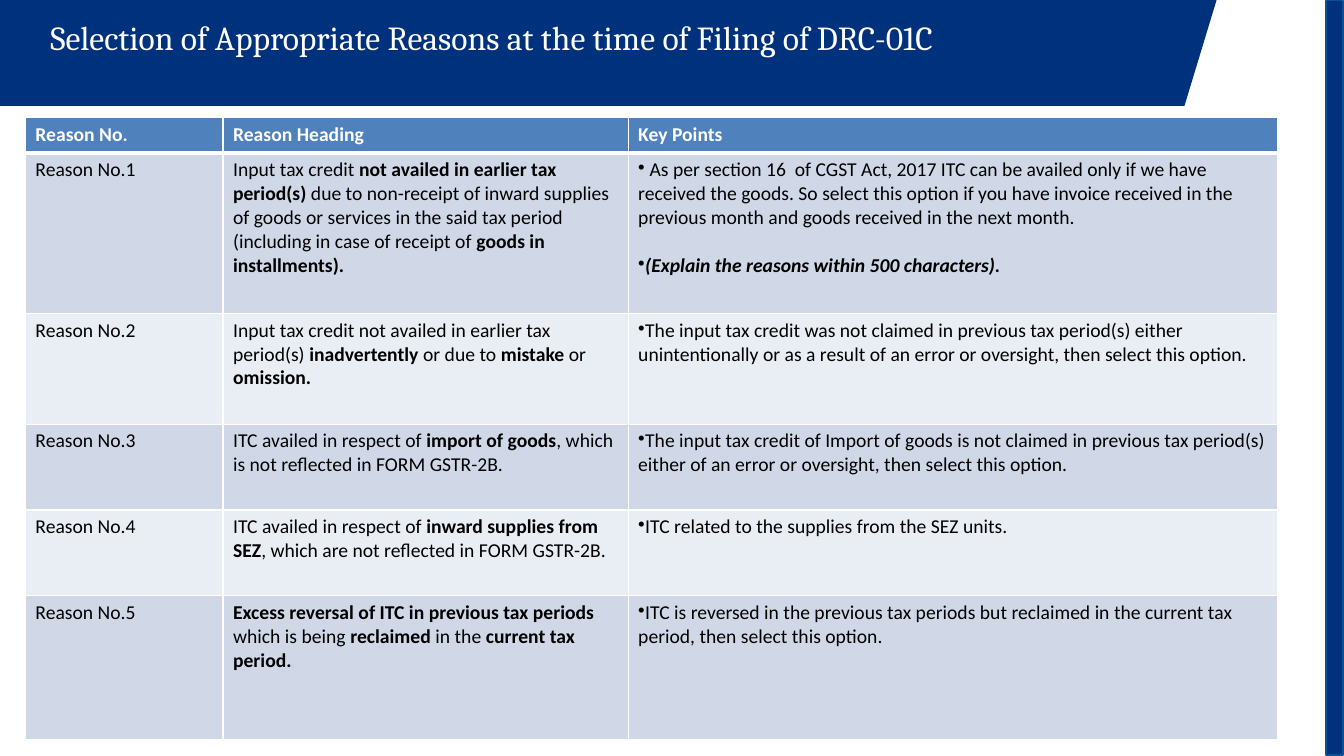
"""Build the slide on choosing a reason when filing DRC-01C."""
from dataclasses import dataclass

from lxml import etree
from pptx import Presentation
from pptx.dml.color import RGBColor
from pptx.enum.shapes import MSO_SHAPE
from pptx.oxml.ns import qn
from pptx.util import Cm, Pt

RECT = MSO_SHAPE.RECTANGLE
WHITE = RGBColor(0xFF, 0xFF, 0xFF)
BLACK = RGBColor(0, 0, 0)
NAVY = RGBColor(0x00, 0x31, 0x7C)
EDGE = RGBColor(0x08, 0x50, 0x91)
HEAD = RGBColor(0x4F, 0x81, 0xBD)
BANDS = (RGBColor(0xE9, 0xED, 0xF4), RGBColor(0xD0, 0xD8, 0xE8))
COLS = (4.98, 10.21, 16.36)
TITLE = "Selection of Appropriate Reasons at the time of Filing of DRC-01C"
HEADS = ("Reason No.", "Reason Heading", "Key Points")


@dataclass(frozen=True)
class Reason:
    """One table row; asterisks in the heading enclose bold words."""
    height: float
    heading: str
    point: str
    note: str = ""


REASONS = (
    Reason(4.04,
           "Input tax credit *not availed in earlier tax period(s) *due to "
           "non-receipt of inward supplies of goods or services in the said "
           "tax period (including in case of receipt of *goods in installments).*",
           " As per section 16  of CGST Act, 2017 ITC can be availed only if we "
           "have received the goods. So select this option if you have invoice "
           "received in the previous month and goods received in the next month.",
           "(Explain the reasons within 500 characters)."),
    Reason(2.79,
           "Input tax credit not availed in earlier tax period(s) "
           "*inadvertently* or due to *mistake* or *omission.*",
           "The input tax credit was not claimed in previous tax period(s) either "
           "unintentionally or as a result of an error or oversight, then select "
           "this option."),
    Reason(2.16,
           "ITC availed in respect of *import of goods*, which is not reflected "
           "in FORM GSTR-2B.",
           "The input tax credit of Import of goods is not claimed in previous tax "
           "period(s) either of an error or oversight, then select this option."),
    Reason(2.16,
           "ITC availed in respect of *inward supplies from SEZ*, which are not "
           "reflected in FORM GSTR-2B.",
           "ITC related to the supplies from the SEZ units."),
    Reason(3.63,
           "*Excess reversal of ITC in previous tax periods* which is being "
           "*reclaimed* in the *current tax period.*",
           "ITC is reversed in the previous tax periods but reclaimed in the "
           "current tax period, then select this option."),
)


def style(para, size: float, face: str, color: RGBColor) -> None:
    """Set the font of a whole paragraph."""
    para.font.size = Pt(size)
    para.font.name = face
    para.font.color.rgb = color


def write(para, text: str, color: RGBColor = BLACK) -> None:
    """Write cell text, with words between asterisks in bold."""
    style(para, 14, "Calibri", color)
    for i, part in enumerate(text.split("*")):
        if part:
            run = para.add_run()
            run.text = part
            if i % 2:
                run.font.bold = True


def bullet(para) -> None:
    """Give a paragraph a bullet without indent."""
    props = para._p.get_or_add_pPr()
    props.set("marL", "0")
    props.set("indent", "0")
    etree.SubElement(props, qn("a:buChar"), char="•")


def paint(cell, color: RGBColor, top: float, base: float) -> None:
    """Draw the white borders of a cell and fill it."""
    props = cell._tc.get_or_add_tcPr()
    for side, width in (("L", 1), ("R", 1), ("T", top), ("B", base)):
        line = etree.SubElement(props, qn(f"a:ln{side}"), w=str(Pt(width)))
        fill = etree.SubElement(line, qn("a:solidFill"))
        etree.SubElement(fill, qn("a:srgbClr"), val=str(WHITE))
    cell.fill.solid()
    cell.fill.fore_color.rgb = color


def frame(slide) -> None:
    """Draw the banner, the side bar and the title."""
    pen = slide.shapes.build_freeform(0, 0)
    pen.add_line_segments([(Cm(30.66), 0), (Cm(29.85), Cm(2.67)), (0, Cm(2.67))])
    banner = pen.convert_to_shape()
    bar = slide.shapes.add_shape(RECT, Cm(33.42), Cm(0.02), Cm(0.43), Cm(19.01))
    for shape in (banner, bar):
        shape.shadow.inherit = False
        shape.fill.solid()
        shape.fill.fore_color.rgb = NAVY
    banner.line.fill.background()
    bar.line.color.rgb = EDGE
    bar.line.width = Pt(1)

    box = slide.shapes.add_textbox(Cm(1.27), Cm(0.43), Cm(27.89), Cm(1.02))
    text = box.text_frame
    text.word_wrap = True
    text.margin_left = text.margin_right = text.margin_top = text.margin_bottom = 0
    text.text = TITLE
    style(text.paragraphs[0], 24, "Cambria", WHITE)


def chart_reasons(slide) -> None:
    """Lay out the table of reasons."""
    tall = (0.89, *(reason.height for reason in REASONS))
    grid = slide.shapes.add_table(len(tall), len(COLS), Cm(0.64), Cm(2.97),
                                  Cm(sum(COLS)), Cm(sum(tall))).table
    grid.horz_banding = False
    for col, width in zip(grid.columns, COLS):
        col.width = Cm(width)
    for row, height in zip(grid.rows, tall):
        row.height = Cm(height)

    for cell, text in zip(grid.rows[0].cells, HEADS):
        para = cell.text_frame.paragraphs[0]
        write(para, text, WHITE)
        para.font.bold = True
        paint(cell, HEAD, 1, 3)

    for i, reason in enumerate(REASONS, 1):
        texts = (f"Reason No.{i}", reason.heading, reason.point)
        for cell, text in zip(grid.rows[i].cells, texts):
            write(cell.text_frame.paragraphs[0], text)
            paint(cell, BANDS[i % 2], 3 if i == 1 else 1, 1)
        points = grid.cell(i, 2).text_frame
        bullet(points.paragraphs[0])
        if reason.note:
            para = points.add_paragraph()
            write(para, reason.note)
            para.font.bold = para.font.italic = True
            para.space_before = Pt(17)
            bullet(para)


def main() -> None:
    """Build and save the deck."""
    deck = Presentation()
    deck.slide_width, deck.slide_height = Cm(33.87), Cm(19.05)
    slide = deck.slides.add_slide(deck.slide_layouts[6])
    frame(slide)
    chart_reasons(slide)
    deck.save("out.pptx")


if __name__ == "__main__":
    main()
